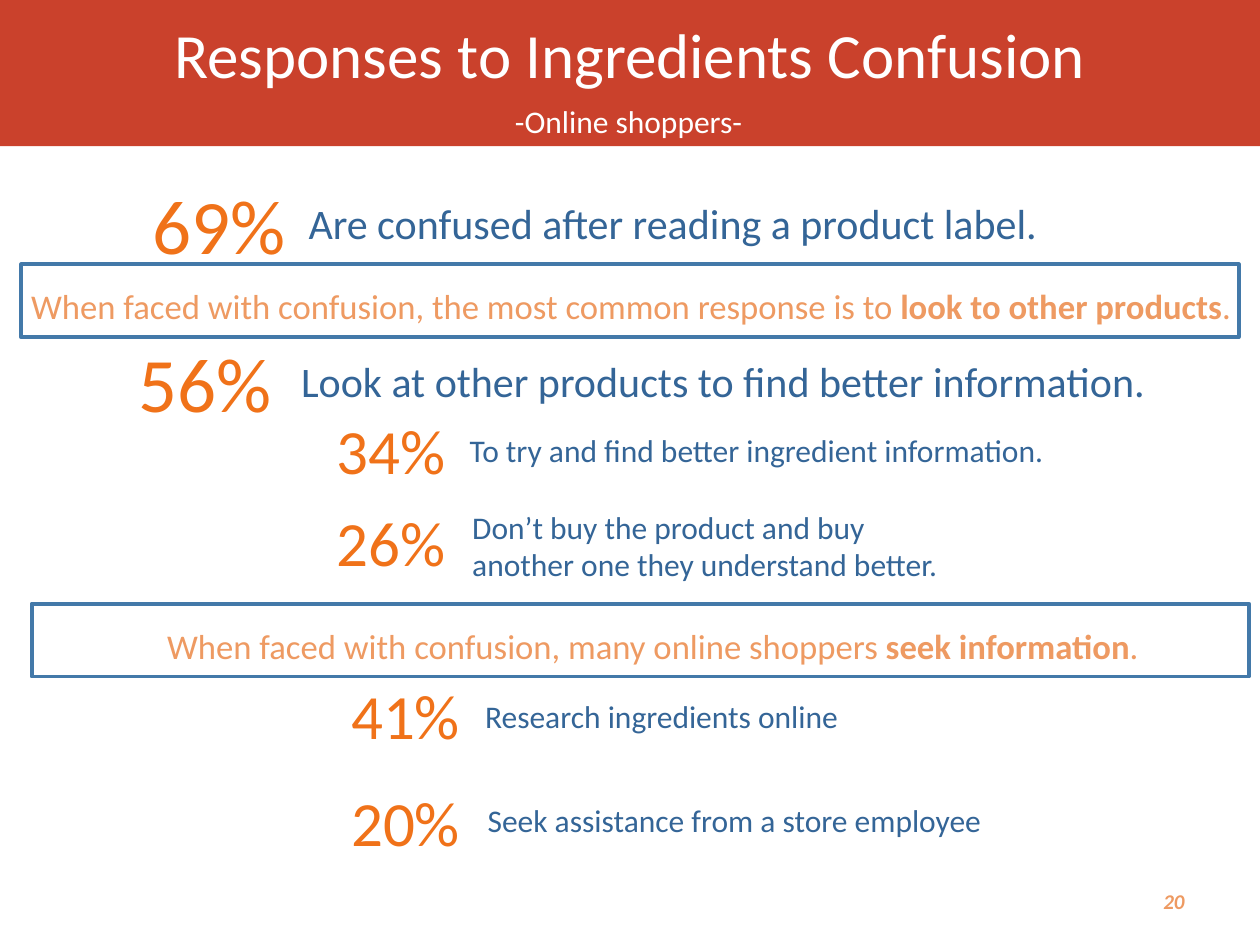
"""Build the slide on how online shoppers respond to ingredients confusion."""
from pptx import Presentation
from pptx.dml.color import RGBColor
from pptx.enum.shapes import MSO_SHAPE
from pptx.enum.text import MSO_ANCHOR, PP_ALIGN
from pptx.util import Cm, Pt

RECTANGLE = MSO_SHAPE.RECTANGLE
TOP, MIDDLE = MSO_ANCHOR.TOP, MSO_ANCHOR.MIDDLE
LEFT, CENTER, RIGHT = PP_ALIGN.LEFT, PP_ALIGN.CENTER, PP_ALIGN.RIGHT

WHITE = RGBColor(0xFF, 0xFF, 0xFF)
RED = RGBColor(0xCA, 0x41, 0x2C)
ORANGE = RGBColor(0xF0, 0x72, 0x19)
PEACH = RGBColor(0xEE, 0x9A, 0x62)
NAVY = RGBColor(0x34, 0x65, 0x97)
BLUE = RGBColor(0x43, 0x79, 0xA9)

WIDTH, HEIGHT = 25.4, 19.05


def add_span(para, text, size=18, color=NAVY, bold=False, italic=False, name="Calibri"):
    span = para.add_run()
    span.text = text
    font = span.font
    font.name, font.size, font.color.rgb = name, Pt(size), color
    font.bold, font.italic = bold, italic


class ShopperSlide:
    def __init__(self, page):
        self.page = page

    def rectangle(self, left, top, width, height, fill=None, line=None):
        box = self.page.shapes.add_shape(RECTANGLE, Cm(left), Cm(top), Cm(width), Cm(height))
        box.shadow.inherit = False
        if fill is None:
            box.fill.background()
        else:
            box.fill.solid()
            box.fill.fore_color.rgb = fill
        if line is None:
            box.line.fill.background()
        else:
            box.line.color.rgb = line
            box.line.width = Pt(2.25)

    def text(self, place, text, align=LEFT, anchor=TOP, wrap=True, spacing=None, **style):
        box = self.page.shapes.add_textbox(*(Cm(length) for length in place))
        frame = box.text_frame
        frame.word_wrap, frame.vertical_anchor = wrap, anchor
        para = frame.paragraphs[0]
        para.alignment = align
        if spacing:
            para.line_spacing = Pt(spacing)
        add_span(para, text, **style)
        return para

    def banner(self, text_place, frame_place, lead, emphasis):
        style = {"size": 19.8, "color": PEACH}
        para = self.text((*text_place, 25.04, 1.09), lead, align=CENTER, **style)
        add_span(para, emphasis, bold=True, **style)
        add_span(para, ".", **style)
        self.rectangle(*frame_place, 24.54, 1.47, line=BLUE)

    def statistic(self, percent, percent_place, label, label_place, large=False):
        number_size, label_size = (44, 24) if large else (36, 18)
        extent = (3.23, 2.13) if large else (2.72, 1.8)
        self.text((*percent_place, *extent), percent, wrap=False, size=number_size, color=ORANGE)
        self.text(label_place, label, size=label_size)


def main():
    deck = Presentation()
    deck.slide_width, deck.slide_height = Cm(WIDTH), Cm(HEIGHT)
    slide = ShopperSlide(deck.slides.add_slide(deck.slide_layouts[6]))

    slide.rectangle(0, 0, WIDTH, 2.95, fill=RED)
    slide.text((0, -0.38, WIDTH, 3.18), "Responses to Ingredients Confusion", align=CENTER,
               anchor=MIDDLE, spacing=36, size=36, color=WHITE)
    slide.text((10.13, 1.93, 5.16, 1.02), "-Online shoppers-", wrap=False, color=WHITE)

    slide.statistic("69%", (2.82, 3.45), "Are confused after reading a product label.",
                    (5.97, 3.86, 17.75, 1.27), large=True)
    slide.banner((0.2, 5.61), (0.43, 5.33),
                 "When faced with confusion, the most common response is to ",
                 "look to other products")
    slide.statistic("56%", (2.54, 6.63), "Look at other products to find better information.",
                    (5.82, 7.04, 18.31, 1.27), large=True)
    slide.statistic("34%", (6.53, 8.18), "To try and find better ingredient information.",
                    (9.22, 8.56, 12.27, 1.02))
    slide.statistic("26%", (6.53, 10.03),
                    "Don’t buy the product and buy another one they understand better.",
                    (9.27, 10.11, 10.26, 1.8))
    slide.banner((0.64, 12.47), (0.64, 12.17),
                 "When faced with confusion, many online shoppers ", "seek information")
    slide.statistic("41%", (6.83, 13.51), "Research ingredients online",
                    (9.53, 13.92, 12.27, 1.02))
    slide.statistic("20%", (6.83, 15.67), "Seek assistance from a store employee",
                    (9.58, 16.03, 10.87, 1.02))

    slide.text((18.21, 17.65, 5.92, 1.02), "20", align=RIGHT, anchor=MIDDLE,
               size=12, color=PEACH, bold=True, italic=True)
    deck.save("out.pptx")


if __name__ == "__main__":
    main()
